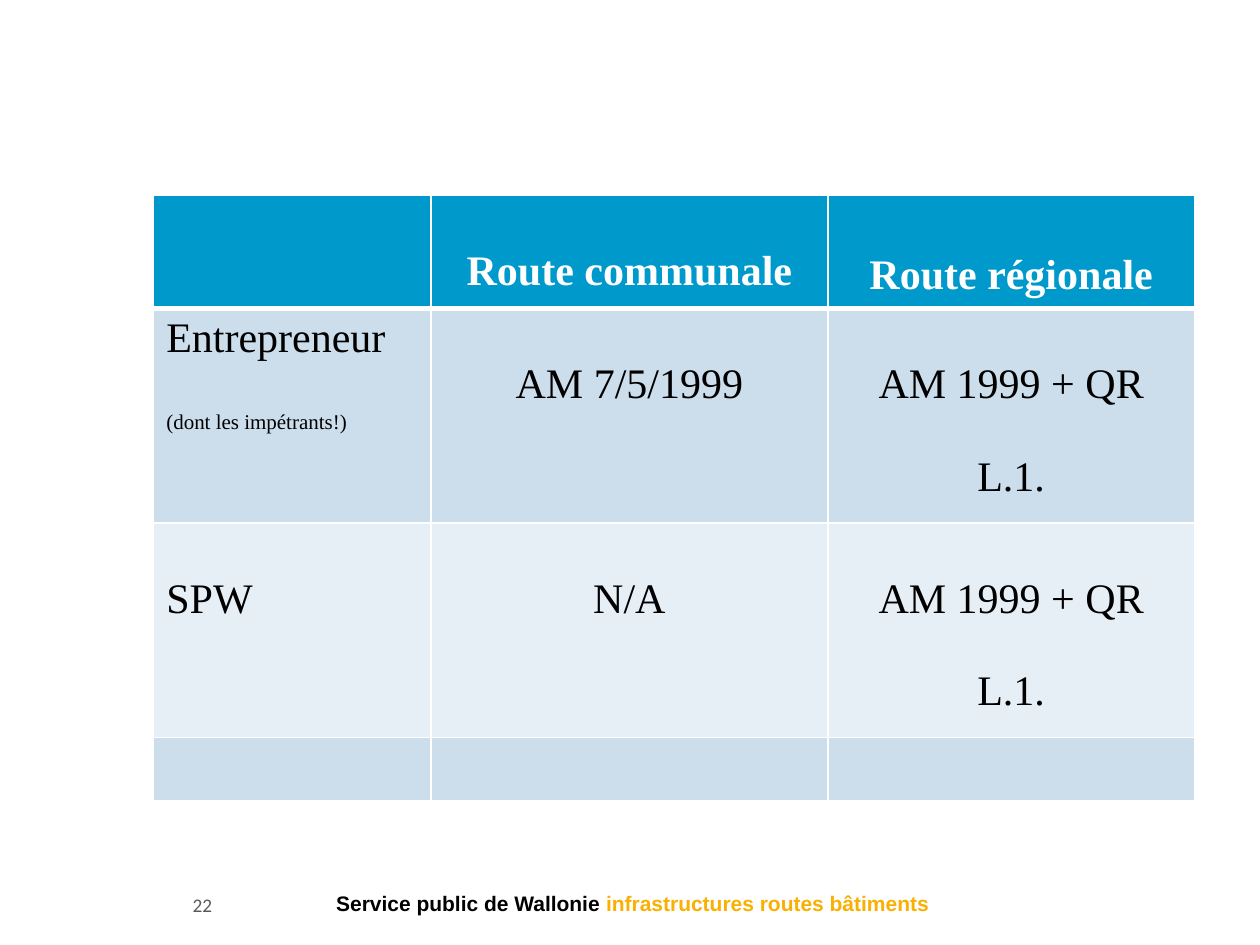
from lxml import etree
from pptx import Presentation
from pptx import util as u
from pptx.dml.color import RGBColor
from pptx.enum import text
from pptx.oxml import ns

COLORS = {
    "header": "0099CC",
    "odd": "CCDEEC",
    "even": "E7EFF6",
    "white": "FFFFFF",
    "black": "000000",
    "gold": "F9B000",
    "gray": "595959",
}
SERIF = "Times New Roman"
LEFT, CENTER, RIGHT = text.PP_ALIGN.LEFT, text.PP_ALIGN.CENTER, text.PP_ALIGN.RIGHT
COLUMN_WIDTHS = [2.2, 3.15, 2.91]
ROW_HEIGHTS = [0.89, 1.7, 1.7, 0.5]
ROWS = [
    ["", "Route communale", "Route régionale"],
    ["Entrepreneur", "AM 7/5/1999", "AM 1999 + QR L.1."],
    ["SPW", "N/A", "AM 1999 + QR L.1."],
    ["", "", ""],
]


def add_span(para, words, size, font, color, bold=False):
    span = para.add_run()
    span.text = words
    span.font.size = u.Pt(size)
    span.font.name = font
    span.font.bold = bold
    span.font.color.rgb = RGBColor.from_string(COLORS[color])


def add_text_box(page, left, top, width, height, align, margin):
    box = page.shapes.add_textbox(*map(u.Inches, (left, top, width, height)))
    frame = box.text_frame
    frame.word_wrap = True
    frame.vertical_anchor = text.MSO_ANCHOR.MIDDLE
    frame.margin_left = frame.margin_right = u.Inches(margin)
    para = frame.paragraphs[0]
    para.alignment = align
    return para


def set_borders(cell, widths):
    properties = cell._tc.get_or_add_tcPr()
    for side, width in widths.items():
        line = etree.SubElement(properties, ns.qn(f"a:ln{side}"), w=str(u.Pt(width)))
        fill = etree.SubElement(line, ns.qn("a:solidFill"))
        etree.SubElement(fill, ns.qn("a:srgbClr"), val=COLORS["white"])


def fill_cell(cell, words, row, column):
    header = row == 0
    set_borders(cell, {"L": 1, "R": 1, "T": 3 if row == 1 else 1, "B": 3 if header else 1})
    cell.fill.solid()
    shade = "header" if header else ("odd" if row % 2 else "even")
    cell.fill.fore_color.rgb = RGBColor.from_string(COLORS[shade])
    if not words:
        return
    para = cell.text_frame.paragraphs[0]
    para.alignment = CENTER if column else LEFT
    if (row, column) != (1, 0):
        para.line_spacing = 2.0
    if header:
        para.space_after = u.Pt(12)
    add_span(para, words, 24, SERIF, "white" if header else "black", header)


def add_rules_table(page):
    frame = page.shapes.add_table(
        len(ROWS), len(COLUMN_WIDTHS), u.Inches(1.22), u.Inches(1.55),
        u.Inches(sum(COLUMN_WIDTHS)), u.Inches(sum(ROW_HEIGHTS)))
    table = frame.table
    for column, width in zip(table.columns, COLUMN_WIDTHS):
        column.width = u.Inches(width)
    for row, height in zip(table.rows, ROW_HEIGHTS):
        row.height = u.Inches(height)
    for row, entries in enumerate(ROWS):
        for column, words in enumerate(entries):
            fill_cell(table.cell(row, column), words, row, column)
    table.cell(0, 2).vertical_anchor = text.MSO_ANCHOR.MIDDLE
    note = table.cell(1, 0).text_frame.add_paragraph()
    note.space_before = u.Pt(28)
    add_span(note, "(dont les impétrants!)", 12, SERIF, "black")


def add_footer(page):
    para = add_text_box(page, -1.3, 7.03, 8.82, 0.28, RIGHT, 0.1)
    add_span(para, "Service public de Wallonie ", 12, "Arial", "black", True)
    add_span(para, "infrastructures routes bâtiments ", 12, "Arial", "gold", True)
    para = add_text_box(page, 1.53, 7.08, 1.97, 0.2, LEFT, 0)
    add_span(para, "22", 11, "Calibri", "gray")


def main():
    deck = Presentation()
    deck.slide_width, deck.slide_height = u.Inches(10), u.Inches(7.5)
    page = deck.slides.add_slide(deck.slide_layouts[6])
    add_footer(page)
    add_rules_table(page)
    deck.save("out.pptx")


if __name__ == "__main__":
    main()
